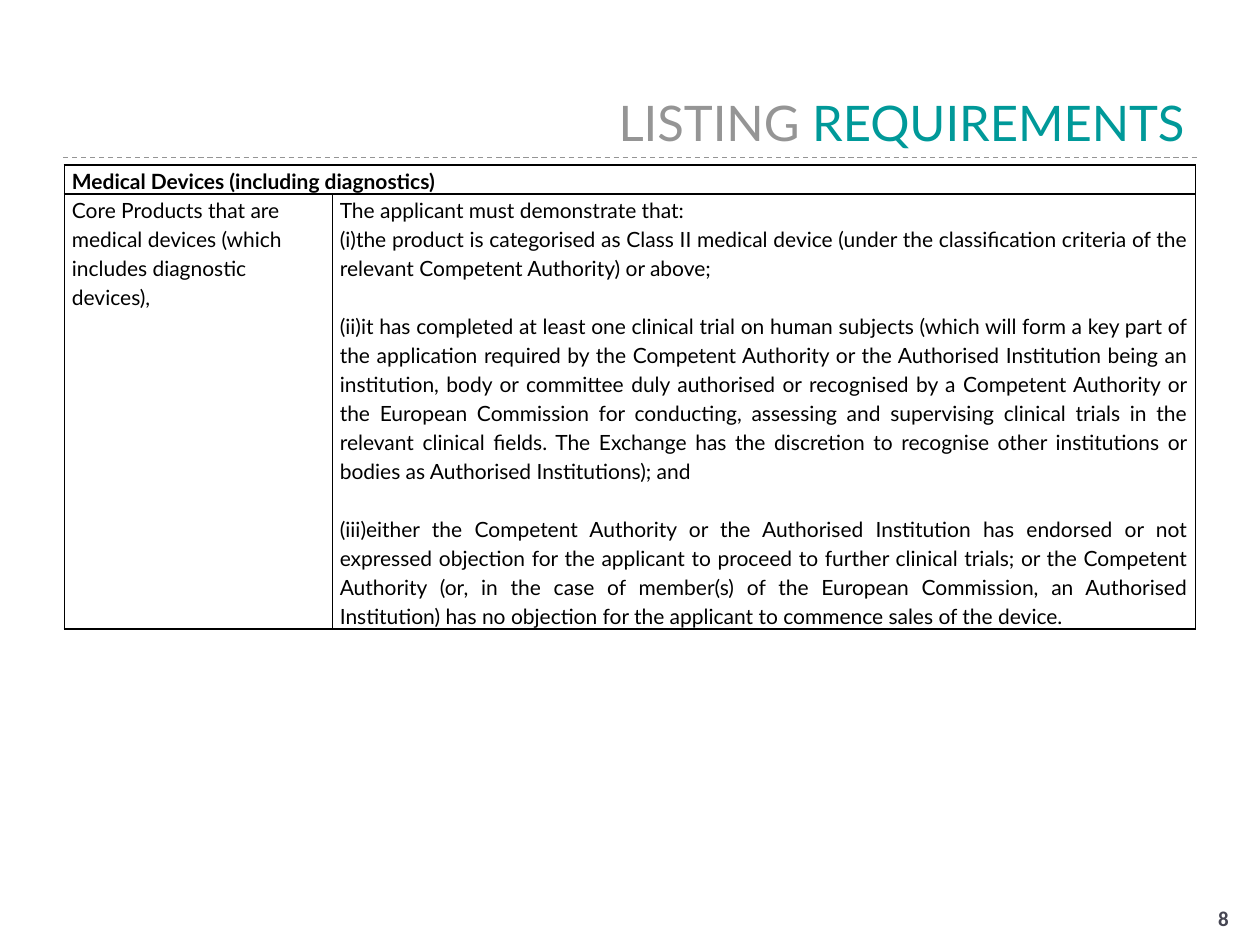
from lxml.etree import SubElement
from pptx import Presentation
from pptx.dml.color import RGBColor
from pptx.enum.dml import MSO_LINE
from pptx.enum.shapes import MSO_CONNECTOR
from pptx.enum.text import MSO_ANCHOR, MSO_AUTO_SIZE, PP_ALIGN
from pptx.oxml.ns import qn
from pptx.util import Cm, Pt

GREY, TEAL, SLATE, BLACK = "959595", "009999", "464653", "000000"
BODY_FONT, NUMBER_FONT = "Lato", "Calibri"
BLANK_LINE = Pt(16.56)

HEADER = "Medical Devices (including diagnostics)"
PRODUCTS = "Core Products that are medical devices (which includes diagnostic devices),"
INTRODUCTION = "The applicant must demonstrate that: "
CONDITIONS = [
    "the product is categorised as Class II medical device (under the "
    "classification criteria of the relevant Competent Authority) or above; ",
    "it has completed at least one clinical trial on human subjects (which will "
    "form a key part of the application required by the Competent Authority or "
    "the Authorised Institution being an institution, body or committee duly "
    "authorised or recognised by a Competent Authority or the European Commission "
    "for conducting, assessing and supervising clinical trials in the relevant "
    "clinical fields. The Exchange has the discretion to recognise other "
    "institutions or bodies as Authorised Institutions); and ",
    "either the Competent Authority or the Authorised Institution has endorsed or "
    "not expressed objection for the applicant to proceed to further clinical "
    "trials; or the Competent Authority (or, in the case of member(s) of the "
    "European Commission, an Authorised Institution) has no objection for the "
    "applicant to commence sales of the device.",
]


def color(value):
    return RGBColor.from_string(value)


def set_all(target, values):
    for name, value in values.items():
        setattr(target, name, value)


def add_run(paragraph, text, value, **font):
    run = paragraph.add_run()
    run.text = text
    set_all(run.font, font)
    run.font.color.rgb = color(value)


class SlideBuilder:
    cell_format = {"margin_left": Cm(0.15), "margin_right": Cm(0.15),
                   "margin_top": 0, "margin_bottom": 0}
    cell_font = {"name": BODY_FONT, "size": Pt(12)}

    def __init__(self, slide):
        self.slide = slide

    def title(self, parts, left, top, width, height):
        title = self.slide.shapes.title
        set_all(title, {"left": Cm(left), "top": Cm(top),
                        "width": Cm(width), "height": Cm(height)})
        set_all(title.text_frame, {"vertical_anchor": MSO_ANCHOR.BOTTOM,
                                   "auto_size": MSO_AUTO_SIZE.NONE})
        paragraph = title.text_frame.paragraphs[0]
        paragraph.alignment = PP_ALIGN.RIGHT
        for text, value in parts:
            add_run(paragraph, text, value, name=BODY_FONT, size=Pt(28))

    def dashed_rule(self, left, top, width):
        rule = self.slide.shapes.add_connector(
            MSO_CONNECTOR.STRAIGHT, Cm(left), Cm(top), Cm(left + width), Cm(top))
        set_all(rule.line, {"width": Pt(0.75), "dash_style": MSO_LINE.DASH})
        rule.line.color.rgb = color(GREY)
        SubElement(rule._element.spPr, qn("a:effectLst"))

    def page_number(self, text, left, top, width, height):
        box = self.slide.shapes.add_textbox(Cm(left), Cm(top), Cm(width), Cm(height))
        box.text_frame.word_wrap = True
        paragraph = box.text_frame.paragraphs[0]
        paragraph.alignment = PP_ALIGN.RIGHT
        add_run(paragraph, text, SLATE, name=NUMBER_FONT, size=Pt(12), bold=True)

    def table(self, left, top, widths, heights):
        """Add a bordered table without fills, its first row merged."""
        table = self.slide.shapes.add_table(
            len(heights), len(widths), Cm(left), Cm(top),
            Cm(sum(widths)), Cm(sum(heights))).table
        set_all(table, {"first_row": False, "horz_banding": False})
        for column, width in zip(table.columns, widths):
            column.width = Cm(width)
        for row, height in zip(table.rows, heights):
            row.height = Cm(height)
        for cell in table.iter_cells():
            set_all(cell, self.cell_format)
            self.borders(cell)
            cell.fill.background()
        table.cell(0, 0).merge(table.cell(0, len(widths) - 1))
        return table

    def borders(self, cell):
        properties = cell._tc.get_or_add_tcPr()
        for side in ("a:lnL", "a:lnR", "a:lnT", "a:lnB"):
            line = SubElement(properties, qn(side), w=str(Pt(1)))
            fill = SubElement(line, qn("a:solidFill"))
            SubElement(fill, qn("a:srgbClr"), val=BLACK)

    def cell_paragraph(self, paragraph, text, bold=False, numbered=False, **layout):
        if numbered:
            properties = paragraph._p.get_or_add_pPr()
            set_all(paragraph, {"level": 0})
            properties.set("marL", "0")
            properties.set("indent", "0")
            SubElement(properties, qn("a:buFont"), typeface=BODY_FONT)
            SubElement(properties, qn("a:buAutoNum"), type="romanLcParenBoth")
        set_all(paragraph, {"line_spacing": 1.15, **layout})
        add_run(paragraph, text, BLACK, bold=bold, **self.cell_font)


def main():
    presentation = Presentation()
    set_all(presentation, {"slide_width": Cm(25.4), "slide_height": Cm(19.05)})
    builder = SlideBuilder(presentation.slides.add_slide(presentation.slide_layouts[5]))

    builder.dashed_rule(1.27, 3.17, 22.86)
    builder.title([("LISTING ", GREY), ("REQUIREMENTS", TEAL)], 1.27, 0.43, 22.86, 2.74)
    builder.page_number("8", 19.5, 18.13, 5.52, 0.62)

    table = builder.table(1.3, 3.33, widths=[5.4, 17.4], heights=[0.58, 8.76])
    builder.cell_paragraph(table.cell(0, 0).text_frame.paragraphs[0], HEADER, bold=True)
    builder.cell_paragraph(table.cell(1, 0).text_frame.paragraphs[0], PRODUCTS)

    requirements = table.cell(1, 1).text_frame
    builder.cell_paragraph(requirements.paragraphs[0], INTRODUCTION,
                           alignment=PP_ALIGN.JUSTIFY)
    for index, condition in enumerate(CONDITIONS):
        builder.cell_paragraph(requirements.add_paragraph(), condition, numbered=True,
                               alignment=PP_ALIGN.JUSTIFY,
                               space_before=BLANK_LINE if index else 0)

    presentation.save("out.pptx")


if __name__ == "__main__":
    main()
